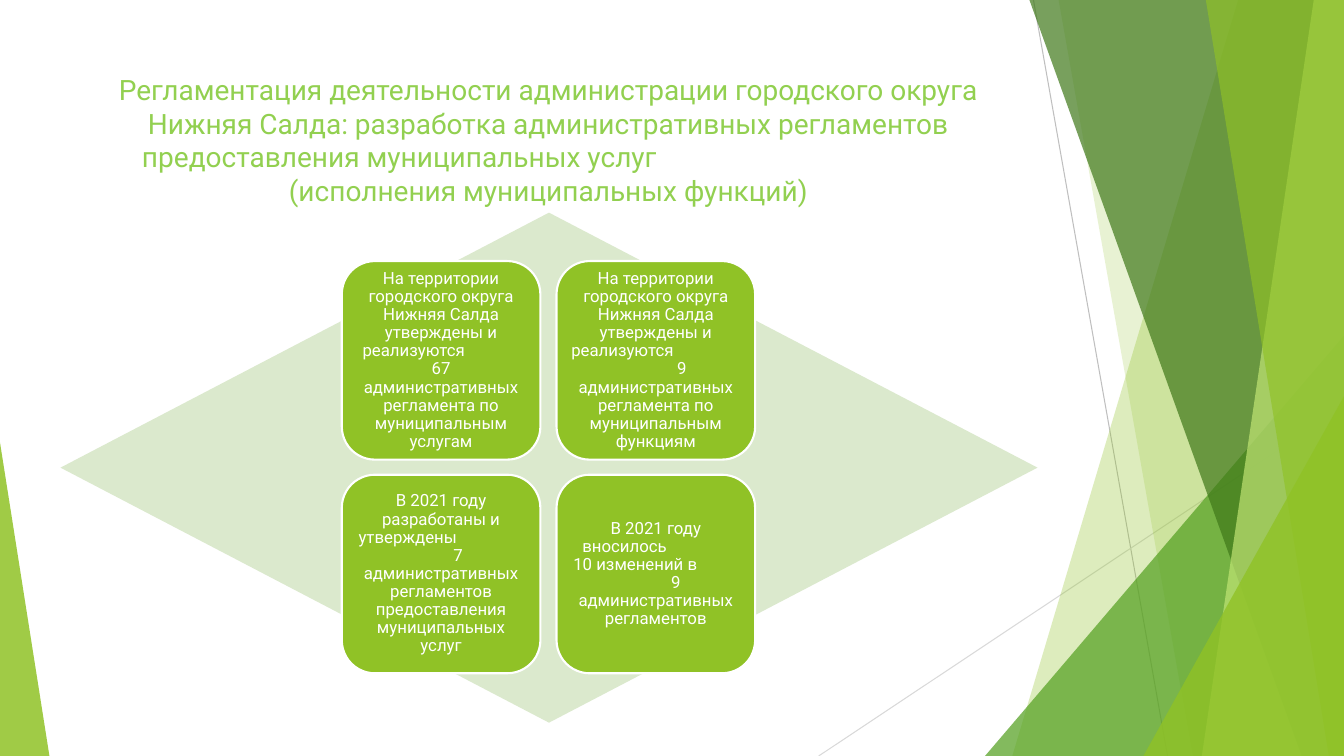
from lxml import etree
from pptx import Presentation
from pptx.dml.color import RGBColor
from pptx.enum import shapes, text
from pptx.oxml import ns
from pptx.util import Inches, Pt


def paint(shape, color, alpha=100):
    """Fill without line or shadow; alpha is opacity in percent."""
    shape.shadow.inherit = False
    shape.line.fill.background()
    shape.fill.solid()
    shape.fill.fore_color.rgb = RGBColor.from_string(color)
    if alpha < 100:
        tone = shape.fill._xPr.find(".//" + ns.qn("a:srgbClr"))
        etree.SubElement(tone, ns.qn("a:alpha"), val=str(alpha * 1000))


def write(frame, parts, size, color):
    """Write (text, indent) parts; None centres, a number aligns left."""
    frame.word_wrap = True
    for i, (words, indent) in enumerate(parts):
        para = frame.paragraphs[0] if i == 0 else frame.add_paragraph()
        para.alignment = text.PP_ALIGN.CENTER
        if indent is not None:
            para.alignment = text.PP_ALIGN.LEFT
            para._p.get_or_add_pPr().set("marL", str(Inches(indent)))
        run = para.add_run()
        run.text = words
        run.font.size = Pt(size)
        run.font.name = "Roboto"
        run.font.color.rgb = RGBColor.from_string(color)


deck = Presentation()
deck.slide_width, deck.slide_height = Inches(13.33), Inches(7.5)
slide = deck.slides.add_slide(deck.slide_layouts[6])
items = slide.shapes

# Thin background lines
for x1, y1, x2, y2, color in [
    (10.25, 0, 11.58, 7.5, "BFBFBF"),
    (13.33, 4.03, 8.12, 7.5, "D9D9D9"),
]:
    line = items.add_connector(
        shapes.MSO_CONNECTOR.STRAIGHT, Inches(x1), Inches(y1), Inches(x2), Inches(y2)
    )
    line.line.color.rgb = RGBColor.from_string(color)
    line.line.width = Pt(0.75)
    etree.SubElement(line._element.spPr, ns.qn("a:effectLst"))

# Bands run from top x to bottom x along the right edge;
# triangles have left, top, width, height and apex
for place, color, alpha in [
    ((12.28, 10.04), "90C226", 30),
    ((10.5, 11.83), "90C226", 20),
    ((9.77, 3.33, 3.56, 4.17, 1), "54A021", 72),
    ((10.21, 12.91), "3F7819", 70),
    ((13.03, 11.92), "C0E474", 70),
    ((11.96, 13.18), "90C226", 65),
    ((11.34, 3.93, 1.99, 3.57, 1), "90C226", 80),
    ((0, 4.39, 0.49, 3.11, 0), "90C226", 85),
]:
    if len(place) == 2:
        top, base = place
        pen = items.build_freeform(Inches(top), 0)
        ends = [(13.33, 0), (13.33, 7.5), (base, 7.5)]
        pen.add_line_segments([(Inches(x), Inches(y)) for x, y in ends])
        facet = pen.convert_to_shape()
    else:
        *box, apex = place
        facet = items.add_shape(
            shapes.MSO_SHAPE.ISOSCELES_TRIANGLE, *[Inches(n) for n in box]
        )
        facet.adjustments[0] = apex
    paint(facet, color, alpha)

title = items.add_textbox(Inches(0.74), Inches(0.67), Inches(9.4), Inches(1.44))
write(title.text_frame, [
    ("Регламентация деятельности администрации городского округа "
     "Нижняя Салда: разработка административных регламентов", None),
    ("предоставления муниципальных услуг", 0.57),
    ("(исполнения муниципальных функций)", None),
], 20, "92D050")

diamond = items.add_shape(
    shapes.MSO_SHAPE.DIAMOND, Inches(0.6), Inches(2.11), Inches(9.69), Inches(5.06)
)
paint(diamond, "DBE9CD")

# Four cards, two per row
intro = "На территории городского округа Нижняя Салда утверждены и"
cards = [
    [(intro, None), ("реализуются", 0.06), ("67", None),
     ("административных регламента по муниципальным услугам", None)],
    [(intro, None), ("реализуются", 0), ("9", 1.05),
     ("административных регламента по муниципальным функциям", None)],
    [("В 2021 году разработаны и", None), ("утверждены", 0.02), ("7", 0.96),
     ("административных регламентов предоставления муниципальных услуг", None)],
    [("В 2021 году", None), ("вносилось", 0.11), ("10 изменений в", 0.02),
     ("9", 0.99), ("административных регламентов", None)],
]
for i, parts in enumerate(cards):
    row, col = divmod(i, 2)
    card = items.add_shape(
        shapes.MSO_SHAPE.ROUNDED_RECTANGLE,
        Inches(3.39 + 2.13 * col), Inches(2.59 + 2.12 * row),
        Inches(1.97), Inches(1.97),
    )
    paint(card, "90C226")
    card.line.color.rgb = RGBColor.from_string("FFFFFF")
    card.line.width = Pt(1.5)
    frame = card.text_frame
    frame.margin_left = frame.margin_right = Inches(0.05)
    frame.margin_top = frame.margin_bottom = Inches(0.05)
    frame.vertical_anchor = text.MSO_ANCHOR.MIDDLE
    write(frame, parts, 12, "FFFFFF")
    for para in frame.paragraphs:
        para.line_spacing = 0.9

deck.save("out.pptx")
